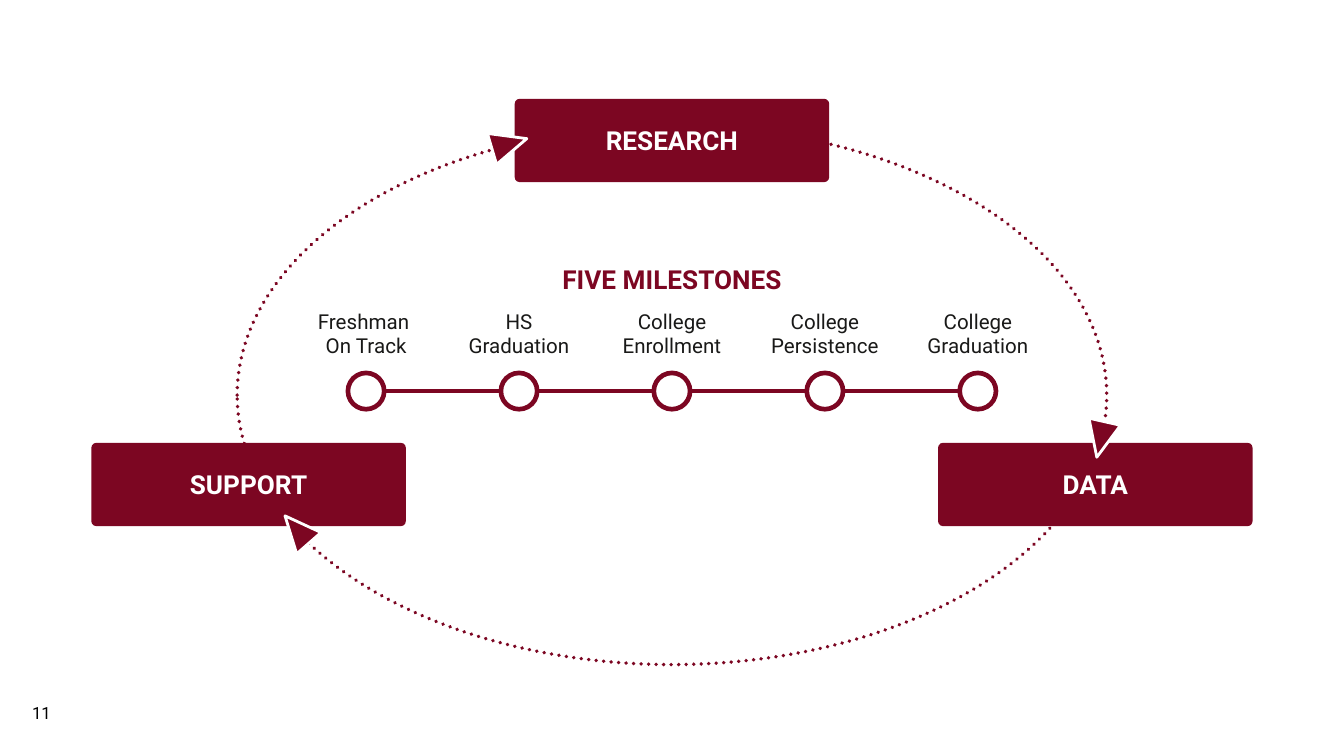
from lxml import etree
from pptx import Presentation
from pptx.dml.color import RGBColor
from pptx.enum.dml import MSO_LINE
from pptx.enum.shapes import MSO_CONNECTOR, MSO_SHAPE
from pptx.enum.text import MSO_ANCHOR, PP_ALIGN
from pptx.oxml.ns import qn
from pptx.util import Inches, Pt

OVAL = MSO_SHAPE.OVAL
ROUND = MSO_SHAPE.ROUNDED_RECTANGLE
TIP = MSO_SHAPE.ISOSCELES_TRIANGLE
STRAIGHT = MSO_CONNECTOR.STRAIGHT
DOTS = MSO_LINE.ROUND_DOT
MIDDLE, TOP = MSO_ANCHOR.MIDDLE, MSO_ANCHOR.TOP
CENTER, LEFT = PP_ALIGN.CENTER, PP_ALIGN.LEFT

MAROON = RGBColor(0x7C, 0x06, 0x22)
WHITE = RGBColor(0xFF, 0xFF, 0xFF)
INK = RGBColor(0x19, 0x19, 0x18)
BLACK = RGBColor(0, 0, 0)

FONT = "Roboto"
UNIT = Inches(0.1)  # one grid column or row
COLS, ROWS = 100, 56.25

CARD = (23.4, 6.2)
STEPS = ["Freshman \vOn Track", "HS Graduation", "College Enrollment",
         "College Persistence", "College Graduation"]


def emu(*cells):
    return [round(cell * UNIT) for cell in cells]


def write(shape, text, size, color, bold=False, align=CENTER, anchor=MIDDLE):
    """Fill a shape with one paragraph; a vertical tab breaks the line."""
    frame = shape.text_frame
    frame.vertical_anchor = anchor
    para = frame.paragraphs[0]
    para.alignment = align
    for i, part in enumerate(text.split("\v")):
        if i:
            para.add_line_break()
        run = para.add_run()
        run.text = part
        font = run.font
        font.name, font.size, font.bold = FONT, Pt(size), bold
        font.color.rgb = color


def label(slide, box, text, size, color, wrap=True, **style):
    area = slide.shapes.add_textbox(*emu(*box))
    area.text_frame.word_wrap = wrap
    write(area, text, size, color, **style)


def draw(slide, kind, box, fill=None, line=None, width=0):
    shape = slide.shapes.add_shape(kind, *emu(*box))
    shape.shadow.inherit = False
    if fill is None:
        shape.fill.background()
    else:
        shape.fill.solid()
        shape.fill.fore_color.rgb = fill
    if line is None:
        shape.line.fill.background()
    else:
        shape.line.color.rgb = line
        shape.line.width = Pt(width)
    return shape


def cycle(slide, box):
    """Three cards on a dotted ring, with a tip where each arc ends."""
    left, top, wide, high = box
    wing = 10.85
    ring = draw(slide, OVAL, (left + wing, top + 2, wide - 2 * wing, high - 2),
                line=MAROON, width=2)
    ring.line.dash_style = DOTS
    ring._element.spPr.find(qn("a:ln")).set("cap", "rnd")

    span, low = wide - CARD[0], 25.6
    for name, x, y in [("RESEARCH", span / 2, 0), ("SUPPORT", 0, low),
                       ("DATA", span, low)]:
        card = draw(slide, ROUND, (left + x, top + y, *CARD), MAROON)
        card.adjustments[0] = 0.06
        write(card, name, 14, WHITE, bold=True)

    for x, y, turn in [(73.9, 24, 192.7), (14.1, 30.7, 318.8), (29.9, 2, 73.5)]:
        tip = draw(slide, TIP, (left + x, top + y, 2.4, 2.7), MAROON, WHITE, 1.5)
        tip.rotation = turn


def track(slide, box):
    """A titled line of milestones, one to each column."""
    left, top, wide, high = box
    step, dot = wide / len(STEPS), 2.7
    row = top + high - dot / 2
    line = slide.shapes.add_connector(
        STRAIGHT, *emu(left + step / 2, row, left + wide - step / 2, row))
    line.line.color.rgb = MAROON
    line.line.width = Pt(2)
    etree.SubElement(line._element.spPr, qn("a:effectLst"))

    label(slide, (left, top, wide, 3.4), "FIVE MILESTONES", 14, MAROON, bold=True)
    for i, name in enumerate(STEPS):
        x = left + i * step
        label(slide, (x, top + 3.35, step, 4.7), name, 11, INK)
        draw(slide, OVAL, (x + (step - dot) / 2, row - dot / 2, dot, dot),
             WHITE, MAROON, 2.5)


def main():
    deck = Presentation()
    deck.slide_width, deck.slide_height = emu(COLS, ROWS)
    slide = deck.slides.add_slide(deck.slide_layouts[6])
    label(slide, (1.4, 51.8, 3.6, 2.5), "11", 9, BLACK, wrap=False,
          align=LEFT, anchor=TOP)
    cycle(slide, (6.8, 7.35, 86.4, 42.1))
    track(slide, (21.55, 19.1, 56.9, 11.35))
    deck.save("out.pptx")


if __name__ == "__main__":
    main()
